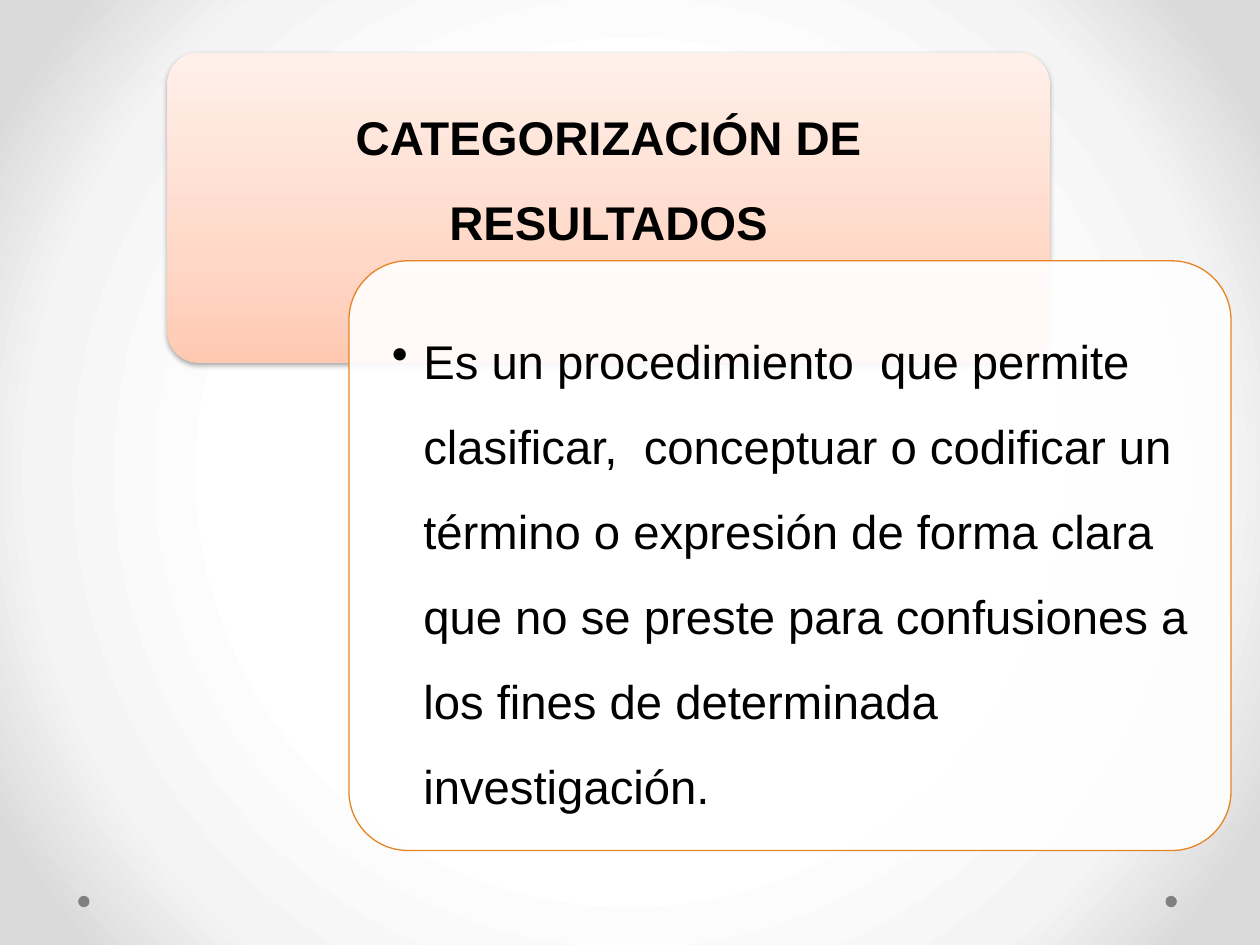
import pptx
import pptx.dml.color
import pptx.enum.shapes
import pptx.enum.text
import pptx.oxml
import pptx.oxml.ns
import pptx.util

SHAPES = pptx.enum.shapes.MSO_SHAPE
ALIGN = pptx.enum.text.PP_ALIGN
NAMESPACE = pptx.oxml.ns.nsdecls("a")
INK = "000000"
CARD_WIDTH = 7
HEADING_LEFT, HEADING_TOP = 1.33, 0.42
BODY_LEFT, BODY_TOP, BODY_HEIGHT = 2.77, 2.07, 4.68
BODY_INSET = 0.13
TEXT_INSET = 0.21


def color(hex_value):
    return pptx.dml.color.RGBColor.from_string(hex_value)


def inches(*lengths):
    return [pptx.util.Inches(length) for length in lengths]


def parse_xml(text):
    return pptx.oxml.parse_xml(text)


def set_gradient(fill, properties, stops, direction):
    """Fill with (percent, colour) stops; direction is a:lin or a:path markup."""
    fill.gradient()
    gradient = properties.find(pptx.oxml.ns.qn("a:gradFill"))
    stop_markup = "".join(
        f'<a:gs pos="{percent * 1000}"><a:srgbClr val="{value}"/></a:gs>'
        for percent, value in stops)
    properties.replace(gradient, parse_xml(
        f'<a:gradFill {NAMESPACE} rotWithShape="1">'
        f"<a:gsLst>{stop_markup}</a:gsLst>{direction}</a:gradFill>"))


def set_background(slide):
    fill = slide.background.fill
    properties = slide.element.find(".//" + pptx.oxml.ns.qn("p:bgPr"))
    center = '<a:fillToRect l="50000" t="50000" r="50000" b="50000"/>'
    set_gradient(fill, properties,
                 [(50, "FFFFFF"), (76, "F4F4F4"), (92, "DADADA")],
                 f'<a:path path="circle">{center}</a:path>')


def add_shape(slide, kind, left, top, width, height, fill=None, line=None):
    shape = slide.shapes.add_shape(kind, *inches(left, top, width, height))
    shape.shadow.inherit = False
    if fill:
        shape.fill.solid()
        shape.fill.fore_color.rgb = color(fill)
    if line:
        shape.line.color.rgb = color(line)
        shape.line.width = pptx.util.Pt(0.75)
    else:
        shape.line.fill.background()
    return shape


def add_card(slide, left, top, height, **style):
    card = add_shape(slide, SHAPES.ROUNDED_RECTANGLE, left, top,
                     CARD_WIDTH, height, **style)
    card.adjustments[0] = 0.1
    return card


def add_heading_card(slide):
    card = add_card(slide, HEADING_LEFT, HEADING_TOP, 2.46)
    properties = card.element.spPr
    set_gradient(card.fill, properties,
                 [(0, "FFC9B1"), (35, "FFD8C8"), (100, "FFF0EA")],
                 '<a:lin ang="16200000" scaled="0"/>')
    effects = properties.find(pptx.oxml.ns.qn("a:effectLst"))
    effects.append(parse_xml(
        f'<a:outerShdw {NAMESPACE} blurRad="39370" dist="20320" dir="5400000" '
        'rotWithShape="0"><a:srgbClr val="000000"><a:alpha val="38000"/>'
        "</a:srgbClr></a:outerShdw>"))


def add_body_card(slide):
    card = add_card(slide, BODY_LEFT, BODY_TOP, BODY_HEIGHT,
                    fill="FFFFFF", line="E68422")
    fill_color = card.element.spPr.find(
        pptx.oxml.ns.qn("a:solidFill") + "/" + pptx.oxml.ns.qn("a:srgbClr"))
    fill_color.append(parse_xml(f'<a:alpha {NAMESPACE} val="90000"/>'))


def write_text(shape, text, bold=False, align=ALIGN.LEFT, bottom=TEXT_INSET,
               bullet=False):
    frame = shape.text_frame
    frame.word_wrap = True
    frame.auto_size = pptx.enum.text.MSO_AUTO_SIZE.NONE
    frame.vertical_anchor = pptx.enum.text.MSO_ANCHOR.TOP
    (frame.margin_left, frame.margin_top, frame.margin_right,
     frame.margin_bottom) = inches(TEXT_INSET, TEXT_INSET, TEXT_INSET, bottom)
    paragraph = frame.paragraphs[0]
    paragraph.alignment = align
    paragraph.line_spacing = 1.5
    run = paragraph.add_run()
    run.text = text
    run.font.name = "Arial"
    run.font.size = pptx.util.Pt(27)
    run.font.bold = bold
    run.font.color.rgb = color(INK)
    if bullet:
        properties = paragraph._p.get_or_add_pPr()
        indent = pptx.util.Inches(0.25)
        properties.set("marL", str(indent))
        properties.set("indent", str(-indent))
        properties.append(parse_xml(f'<a:buChar {NAMESPACE} char="•"/>'))


def place_title(slide, text):
    title = slide.shapes.title
    title.left, title.top, title.width, title.height = inches(
        HEADING_LEFT, HEADING_TOP, CARD_WIDTH, 1.64)
    write_text(title, text, bold=True, align=ALIGN.CENTER, bottom=0.11)
    title.element.getparent().append(title.element)  # in front of its card


def add_body_text(slide, text):
    box = slide.shapes.add_textbox(*inches(
        BODY_LEFT + BODY_INSET, BODY_TOP + BODY_INSET,
        CARD_WIDTH - 2 * BODY_INSET, BODY_HEIGHT - 2 * BODY_INSET))
    write_text(box, text, bullet=True)


def main():
    presentation = pptx.Presentation()
    presentation.slide_width, presentation.slide_height = inches(10, 7.5)
    slide = presentation.slides.add_slide(presentation.slide_layouts[5])
    set_background(slide)
    for left in (9.25, 0.62):
        add_shape(slide, SHAPES.OVAL, left, 7.11, 0.09, 0.09, fill="808080")
    add_heading_card(slide)
    place_title(slide, "CATEGORIZACIÓN DE RESULTADOS")
    add_body_card(slide)
    add_body_text(slide, "Es un procedimiento  que permite clasificar,  "
                  "conceptuar o codificar un término o expresión de forma clara "
                  "que no se preste para confusiones a los fines de determinada "
                  "investigación.")
    presentation.save("out.pptx")


if __name__ == "__main__":
    main()
